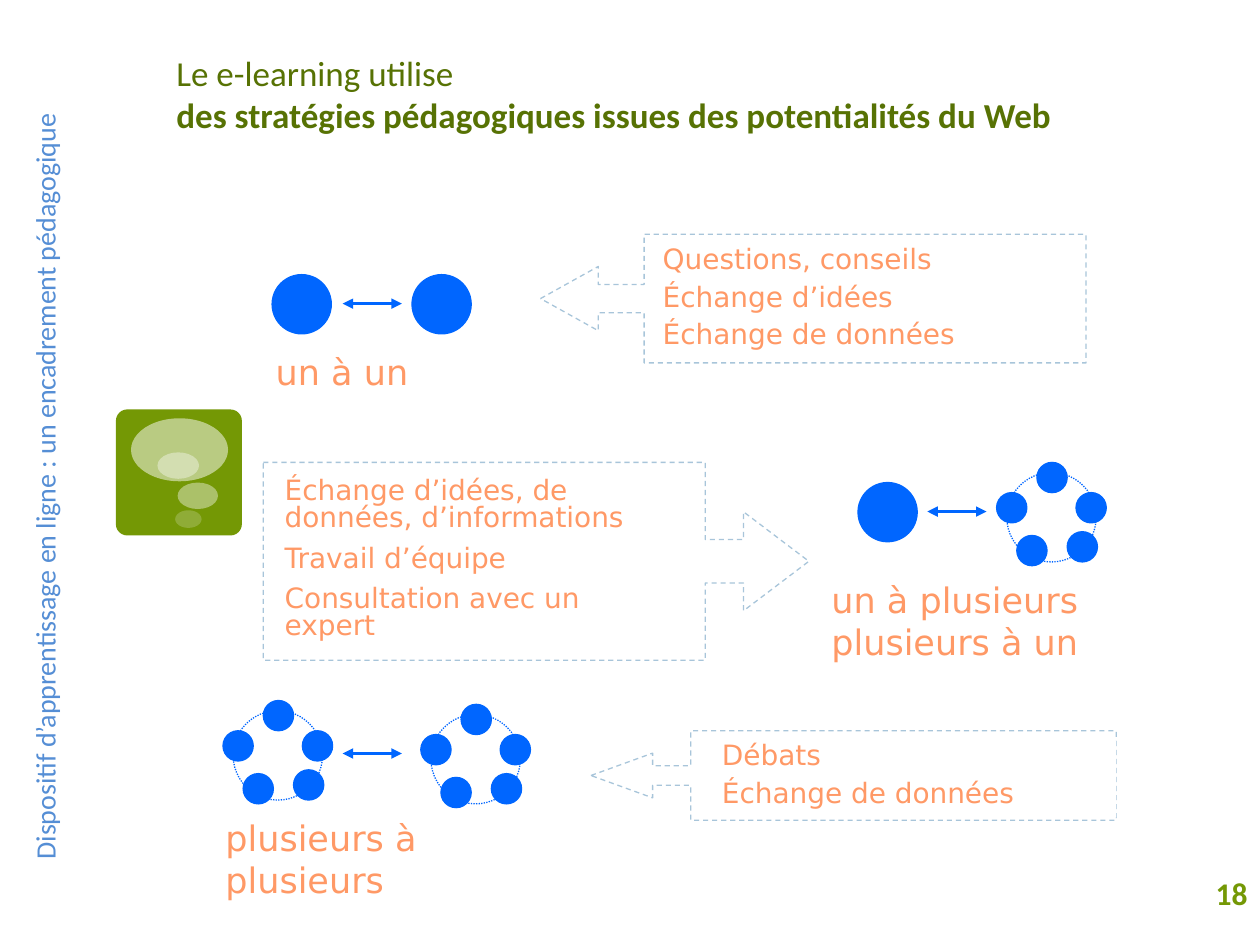
from typing import NamedTuple

from lxml.etree import SubElement
from pptx import Presentation
from pptx.dml.color import RGBColor
from pptx.enum.dml import MSO_LINE
from pptx.enum.shapes import MSO_CONNECTOR, MSO_SHAPE as Preset
from pptx.enum.text import MSO_ANCHOR as Anchor, MSO_AUTO_SIZE as AutoSize, PP_ALIGN as Align
from pptx.oxml.ns import qn
from pptx.util import Inches, Pt

WHITE = RGBColor(0xFF, 0xFF, 0xFF)
BLUE = RGBColor(0x00, 0x66, 0xFF)
ORANGE = RGBColor(0xFF, 0x99, 0x66)
GREEN = RGBColor(0x74, 0x98, 0x05)
DARK_GREEN = RGBColor(0x57, 0x72, 0x04)
SIDE_BLUE = RGBColor(0x55, 0x8E, 0xD5)
PALE_BLUE = RGBColor(0xA8, 0xC5, 0xDA)

PERSON, MEMBER, RING = 0.47, 0.24, 0.71
MEMBER_OFFSETS = [(0.24, -0.08), (0.55, 0.16), (0.48, 0.47), (0.08, 0.5), (-0.08, 0.16)]


class Box(NamedTuple):
    left: float
    top: float
    width: float
    height: float


class Bubble(NamedTuple):
    box: Box
    opacity: int


class Exchange(NamedTuple):
    """Single people, groups of people and the arrow that links them."""
    people: list[tuple[float, float]]
    rings: list[tuple[float, float]]
    arrow: tuple[float, float]


class Caption(NamedTuple):
    box: Box
    text: str


class Callout(NamedTuple):
    preset: Preset
    box: Box
    adjustments: list[float]
    list_box: Box
    line_spacing: float
    items: list[str]


BUBBLES = [
    Bubble(Box(1.04, 3.32, 0.77, 0.5), 50),
    Bubble(Box(1.41, 3.83, 0.32, 0.21), 40),
    Bubble(Box(1.39, 4.05, 0.21, 0.14), 20),
    Bubble(Box(1.25, 3.59, 0.33, 0.21), 38),
]
EXCHANGES = [
    Exchange([(2.16, 2.18), (3.27, 2.18)], [], (2.72, 2.41)),
    Exchange([(6.81, 3.83)], [(7.99, 3.75)], (7.36, 4.06)),
    Exchange([], [(1.85, 5.64), (3.42, 5.67)], (2.72, 5.98)),
]
CAPTIONS = [
    Caption(Box(2.09, 2.73, 1.73, 0.43), "un à un"),
    Caption(Box(6.5, 4.54, 2.68, 0.77), "un à plusieurs\vplusieurs à un"),
    Caption(Box(1.69, 6.43, 2.68, 0.77), "plusieurs à plusieurs"),
]
CALLOUTS = [
    Callout(Preset.LEFT_ARROW_CALLOUT, Box(4.29, 1.86, 4.33, 1.02), [0.22, 0.25, 0.45, 0.81],
            Box(5.16, 1.94, 3.39, 0.93), 0.7,
            ["Questions, conseils", "Échange d’idées", "Échange de données"]),
    Callout(Preset.RIGHT_ARROW_CALLOUT, Box(2.09, 3.67, 4.33, 1.57), [0.22, 0.25, 0.33, 0.81],
            Box(2.16, 3.75, 3.31, 1.44), 0.8,
            ["Échange d’idées, de données, d’informations", "Travail d’équipe",
             "Consultation avec un expert"]),
    Callout(Preset.LEFT_ARROW_CALLOUT, Box(4.69, 5.8, 4.17, 0.71), [0.22, 0.25, 0.69, 0.81],
            Box(5.63, 5.88, 3.23, 0.61), 0.7,
            ["Débats", "Échange de données"]),
]


def place(shape, box: Box) -> None:
    shape.left, shape.top, shape.width, shape.height = map(Inches, box)


def add_preset(shapes, preset: Preset, box: Box, fill: RGBColor | None = None,
               line: RGBColor | None = None, dash: MSO_LINE | None = None):
    shape = shapes.add_shape(preset, *map(Inches, box))
    shape.shadow.inherit = False
    if fill is None:
        shape.fill.background()
    else:
        shape.fill.solid()
        shape.fill.fore_color.rgb = fill
    if line is None:
        shape.line.fill.background()
    else:
        shape.line.color.rgb = line
        shape.line.width = Pt(0.75)
        shape.line.dash_style = dash
    return shape


def write(shape, lines: list[str], font: str, size: int, color: RGBColor, bold: bool = False,
          align: Align = Align.LEFT, anchor: Anchor = Anchor.TOP,
          spacing: float = 1.0, before: float = 0) -> None:
    frame = shape.text_frame
    frame.text = "\n".join(lines)
    frame.word_wrap = True
    frame.auto_size = AutoSize.NONE
    frame.vertical_anchor = anchor
    for paragraph in frame.paragraphs:
        paragraph.alignment = align
        paragraph.line_spacing = spacing
        paragraph.space_before = Pt(before)
        for run in paragraph.runs:
            run.font.name, run.font.size, run.font.bold = font, Pt(size), bold
            run.font.color.rgb = color


def remove_bullets(shape) -> None:
    for paragraph in shape.text_frame.paragraphs:
        properties = paragraph._p.get_or_add_pPr()
        properties.set("marL", "0")
        properties.set("indent", "0")
        SubElement(properties, qn("a:buNone"))


def add_bubble(shapes, bubble: Bubble) -> None:
    ellipse = add_preset(shapes, Preset.OVAL, bubble.box, WHITE)
    color = ellipse._element.spPr.find(qn("a:solidFill"))[0]
    SubElement(color, qn("a:alpha"), val=str(bubble.opacity * 1000))


def add_double_arrow(shapes, left: float, top: float) -> None:
    arrow = shapes.add_connector(MSO_CONNECTOR.STRAIGHT, Inches(left), Inches(top),
                                 Inches(left + PERSON), Inches(top))
    arrow.line.color.rgb = BLUE
    arrow.line.width = Pt(2)
    line = arrow.line._get_or_add_ln()
    for end in ("a:headEnd", "a:tailEnd"):
        SubElement(line, qn(end), type="triangle")
    SubElement(arrow._element.spPr, qn("a:effectLst"))


def add_exchange(shapes, exchange: Exchange) -> None:
    group = shapes.add_group_shape().shapes
    for left, top in exchange.people:
        add_preset(group, Preset.OVAL, Box(left, top, PERSON, PERSON), BLUE, BLUE)
    for left, top in exchange.rings:
        add_preset(group, Preset.OVAL, Box(left, top, RING, RING),
                   line=BLUE, dash=MSO_LINE.ROUND_DOT)
        for dx, dy in MEMBER_OFFSETS:
            add_preset(group, Preset.OVAL, Box(left + dx, top + dy, MEMBER, MEMBER), BLUE, BLUE)
    add_double_arrow(group, *exchange.arrow)


def add_callout(shapes, callout: Callout, body) -> None:
    outline = add_preset(shapes, callout.preset, callout.box, WHITE, PALE_BLUE, MSO_LINE.DASH)
    for index, value in enumerate(callout.adjustments):
        outline.adjustments[index] = value
    place(body, callout.list_box)
    body.fill.solid()
    body.fill.fore_color.rgb = WHITE
    write(body, callout.items, "DejaVu Sans", 16, ORANGE,
          spacing=callout.line_spacing, before=8)
    remove_bullets(body)
    outline._element.addnext(body._element)


def add_text(shapes, box: Box, text: str, font: str, size: int, color: RGBColor, **style):
    label = shapes.add_textbox(*map(Inches, box))
    write(label, [text], font, size, color, **style)
    return label


def main() -> None:
    deck = Presentation()
    deck.slide_width, deck.slide_height = Inches(10), Inches(7.5)
    slide = deck.slides.add_slide(deck.slide_layouts.get_by_name("Comparison"))
    shapes = slide.shapes
    title, *bodies, spare = slide.placeholders
    spare._element.getparent().remove(spare._element)

    place(title, Box(1.3, 0.36, 8.35, 0.77))
    write(title, ["Le e-learning utilise",
                  "des stratégies pédagogiques issues des potentialités du Web"],
          "Calibri", 20, DARK_GREEN)
    title.text_frame.paragraphs[1].runs[0].font.bold = True

    icon = shapes.add_group_shape().shapes
    tile = add_preset(icon, Preset.ROUNDED_RECTANGLE, Box(0.92, 3.25, 1, 1), GREEN)
    tile.adjustments[0] = 0.09
    for bubble in BUBBLES:
        add_bubble(icon, bubble)

    for exchange in EXCHANGES:
        add_exchange(shapes, exchange)
    for caption in CAPTIONS:
        add_text(shapes, caption.box, caption.text, "DejaVu Sans", 20, ORANGE, before=10)
    for callout, body in zip(CALLOUTS, bodies):
        add_callout(shapes, callout, body)

    course = add_text(shapes, Box(-2.92, 3.12, 6.92, 0.68),
                      "Dispositif d’apprentissage en ligne : un encadrement pédagogique",
                      "Calibri", 16, SIDE_BLUE, spacing=0.9)
    course.rotation = 270
    add_text(shapes, Box(7.67, 6.83, 2.33, 0.52), "18", "Calibri", 18, GREEN,
             bold=True, align=Align.RIGHT, anchor=Anchor.MIDDLE)
    deck.save("out.pptx")


if __name__ == "__main__":
    main()
